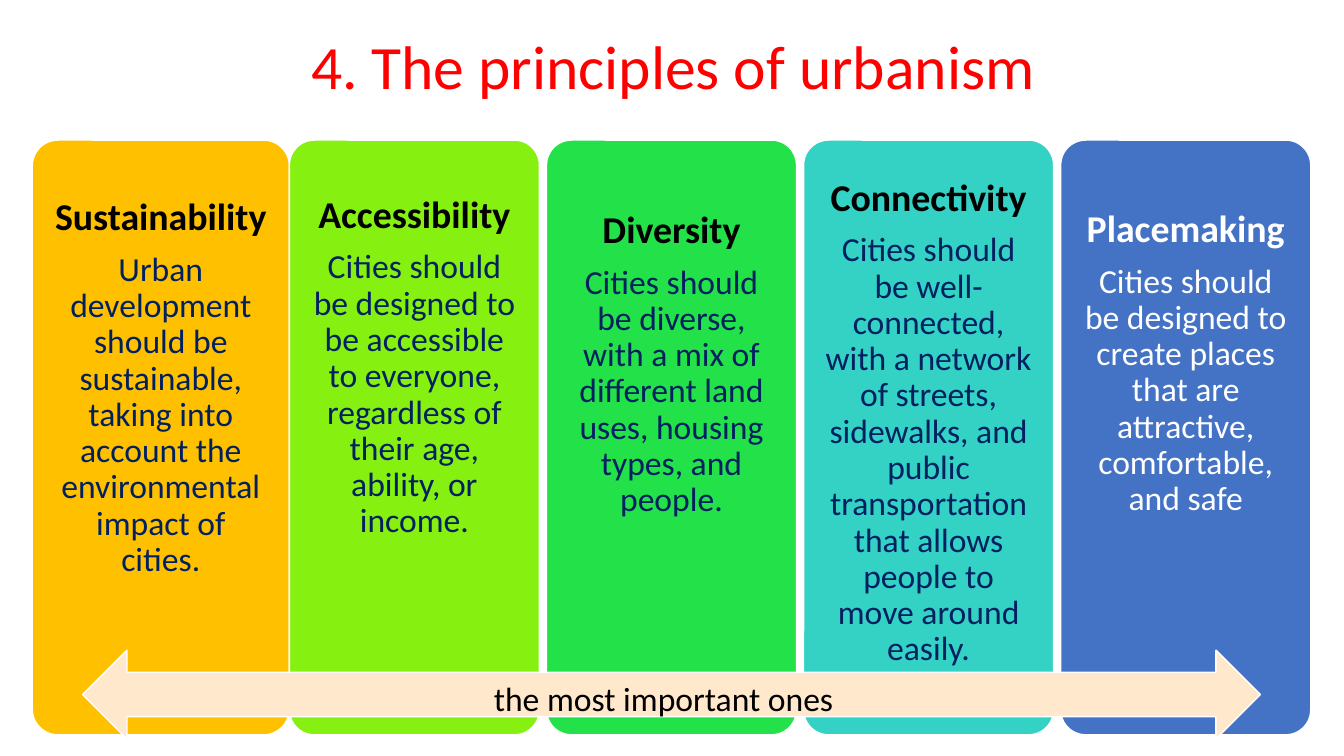
import pptx
import pptx.util
import pptx.dml.color
import pptx.enum.shapes
import pptx.enum.text
from pptx.util import Inches

THEME = {
    "font": "Calibri",
    "title": "FF0000",
    "heading": "000000",
    "body": "002060",
    "light": "FFFFFF",
    "arrow": "FFE8CC",
    "title_size": 44,
    "heading_size": 27,
    "body_size": 24,
}
ALIGN = pptx.enum.text.PP_ALIGN
ANCHOR = pptx.enum.text.MSO_ANCHOR
SHAPE = pptx.enum.shapes.MSO_SHAPE


def write(paragraph, text, size, color, bold=False, align=ALIGN.CENTER, spacing=0.9, after=0):
    paragraph.alignment = align
    paragraph.line_spacing = spacing
    paragraph.space_after = pptx.util.Pt(after)
    run = paragraph.add_run()
    run.text = text
    run.font.name = THEME["font"]
    run.font.size = pptx.util.Pt(size)
    run.font.bold = bold
    run.font.color.rgb = pptx.dml.color.RGBColor.from_string(color)


def add_filled(slide, kind, left, top, width, height, fill):
    shape = slide.shapes.add_shape(kind, Inches(left), Inches(top), Inches(width), Inches(height))
    shape.shadow.inherit = False
    shape.fill.solid()
    shape.fill.fore_color.rgb = pptx.dml.color.RGBColor.from_string(fill)
    shape.line.color.rgb = pptx.dml.color.RGBColor.from_string(THEME["light"])
    shape.line.width = pptx.util.Pt(1)
    return shape


presentation = pptx.Presentation()
presentation.slide_width = Inches(13.33)
presentation.slide_height = Inches(7.5)
slide = presentation.slides.add_slide(presentation.slide_layouts[6])

title = slide.shapes.add_textbox(Inches(1.68), Inches(0.54), Inches(10), Inches(0.53))
title.text_frame.word_wrap = True
title.text_frame.vertical_anchor = ANCHOR.BOTTOM
write(title.text_frame.paragraphs[0], "4. The principles of urbanism", THEME["title_size"], THEME["title"])

principles = [
    ("Sustainability",
     "Urban development should be sustainable, taking into account the environmental impact of cities.",
     "FFC000", THEME["heading"], THEME["body"], 2.55, 0.5),
    ("Accessibility",
     "Cities should be designed to be accessible to everyone, regardless of their age, ability, or income.",
     "86F011", THEME["heading"], THEME["body"], 2.48, 0.48),
    ("Diversity",
     "Cities should be diverse, with a mix of different land uses, housing types, and people.",
     "23E148", THEME["heading"], THEME["body"], 2.48, 0.63),
    ("Connectivity",
     "Cities should be well-connected, with a network of streets, sidewalks, and public "
     "transportation that allows people to move around easily.",
     "33D2C5", THEME["heading"], THEME["body"], 2.48, 0.31),
    ("Placemaking",
     "Cities should be designed to create places that are attractive, comfortable, and safe",
     "4472C4", THEME["light"], THEME["light"], 2.48, 0.62),
]
for index, (name, description, fill, name_color, body_color, width, inset) in enumerate(principles):
    card = add_filled(slide, SHAPE.ROUNDED_RECTANGLE, 0.32 + 2.55 * index, 1.39, width, 5.9, fill)
    card.adjustments[0] = 0.1
    frame = card.text_frame
    frame.word_wrap = True
    frame.vertical_anchor = ANCHOR.TOP
    frame.margin_left = frame.margin_right = Inches(0.14)
    frame.margin_top = Inches(inset)
    frame.margin_bottom = 0
    write(frame.paragraphs[0], name, THEME["heading_size"], name_color, bold=True, after=9.5)
    write(frame.add_paragraph(), description, THEME["body_size"], body_color)

add_filled(slide, SHAPE.LEFT_RIGHT_ARROW, 0.82, 6.45, 11.68, 0.88, THEME["arrow"])

caption = slide.shapes.add_textbox(Inches(4.8), Inches(6.68), Inches(3.6), Inches(0.5))
caption.text_frame.word_wrap = False
write(caption.text_frame.paragraphs[0], "the most important ones", THEME["body_size"], THEME["heading"],
      align=ALIGN.LEFT, spacing=1.0)

presentation.save("out.pptx")
